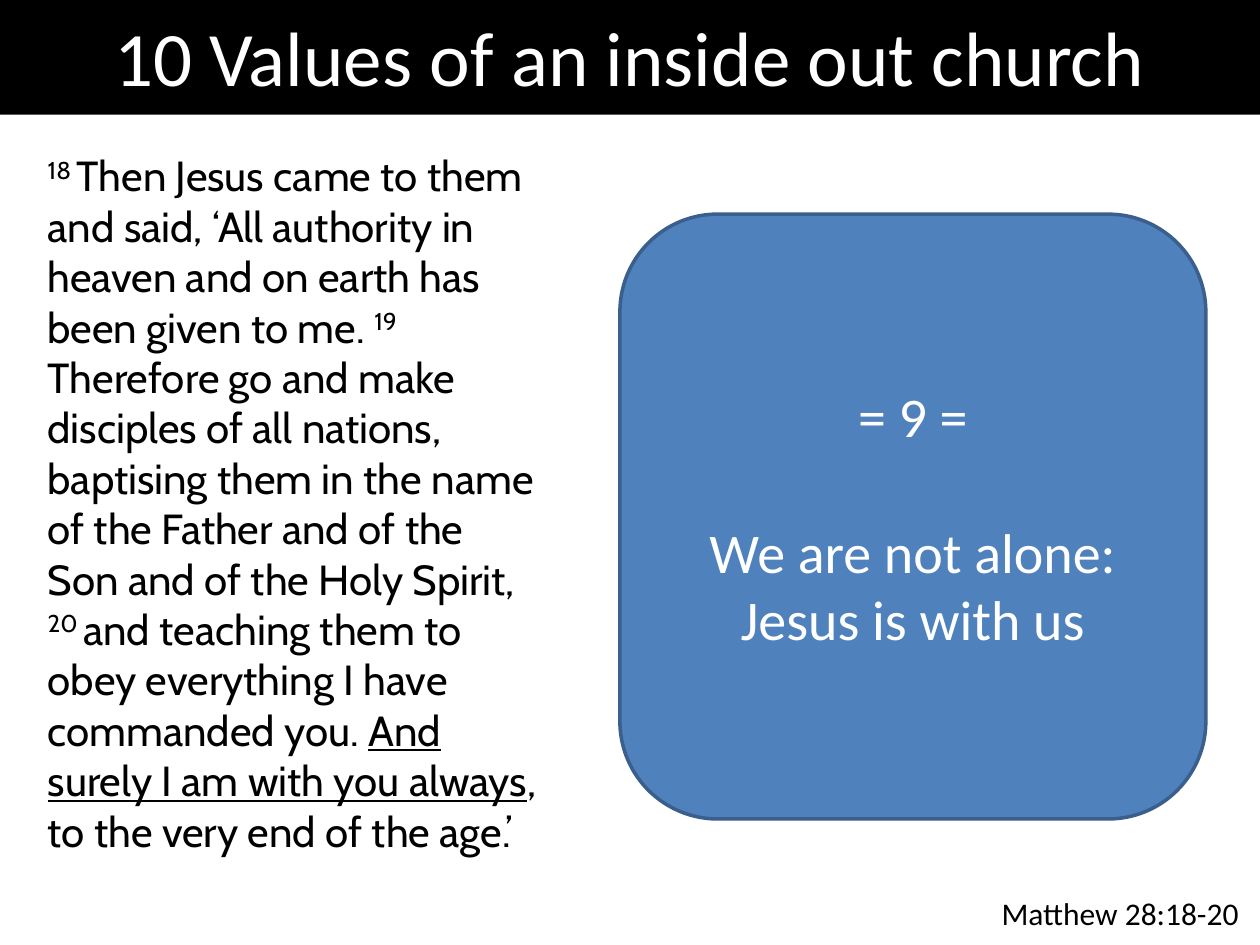
from dataclasses import dataclass

from pptx import Presentation, util as u
from pptx.dml.color import RGBColor
from pptx.enum import shapes, text


@dataclass(frozen=True)
class Theme:
    black: str = "000000"
    white: str = "FFFFFF"
    blue: str = "4F81BD"
    edge: str = "3A5F8C"
    heading_font: str = "Calibri"
    verse_font: str = "Cabin"
    title: int = 44
    point: int = 32
    verse: int = 24
    reference: int = 18


def add_span(para, words, *, font, size, color, raised=False, underline=False):
    """Add one formatted stretch of text to a paragraph."""
    span = para.add_run()
    span.text = words
    span.font.name = font
    span.font.size = u.Pt(size)
    span.font.color.rgb = RGBColor.from_string(color)
    if underline:
        span.font.underline = True
    if raised:
        span.font._element.set("baseline", "30000")


class PageBuilder:
    """Places elements on a grid of 100 columns by 75 rows."""

    COLUMNS, ROWS = 100, 75

    def __init__(self, deck, theme):
        self.deck = deck
        self.theme = theme
        self.page = deck.slides.add_slide(deck.slide_layouts[6])

    def place(self, column, row, columns, rows):
        across = self.deck.slide_width / self.COLUMNS
        down = self.deck.slide_height / self.ROWS
        return [round(n) for n in (column * across, row * down, columns * across, rows * down)]

    def panel(self, kind, area, lines, *, fill, size, edge=None, gap=0):
        """Filled shape with centred white lines of text."""
        box = self.page.shapes.add_shape(kind, *self.place(*area))
        box.shadow.inherit = False
        box.fill.solid()
        box.fill.fore_color.rgb = RGBColor.from_string(fill)
        if edge:
            box.line.color.rgb = RGBColor.from_string(edge)
            box.line.width = u.Pt(2)
        else:
            box.line.fill.background()
        frame = box.text_frame
        frame.word_wrap = True
        frame.vertical_anchor = text.MSO_ANCHOR.MIDDLE
        for index, line in enumerate(lines):
            para = frame.add_paragraph() if index else frame.paragraphs[0]
            para.alignment = text.PP_ALIGN.CENTER
            if index:
                para.space_before = u.Pt(gap)
            add_span(para, line, font=self.theme.heading_font, size=size, color=self.theme.white)

    def passage(self, area, spans, *, font, size, wrap=True):
        """Text box holding one paragraph of (words, format) spans."""
        box = self.page.shapes.add_textbox(*self.place(*area))
        frame = box.text_frame
        frame.word_wrap = wrap
        frame.auto_size = text.MSO_AUTO_SIZE.SHAPE_TO_FIT_TEXT
        for words, style in spans:
            add_span(frame.paragraphs[0], words, font=font, size=size,
                     color=self.theme.black, **style)


def main():
    theme = Theme()
    deck = Presentation()
    deck.slide_width, deck.slide_height = u.Inches(10), u.Inches(7.5)
    builder = PageBuilder(deck, theme)

    # Bible passage with raised verse numbers
    number, plain, stressed = {"raised": True}, {}, {"underline": True}
    verses = [
        ("18 ", number),
        ("Then Jesus came to them and said, ‘All authority in heaven and on earth "
         "has been given to me. ", plain),
        ("19 ", number),
        ("Therefore go and make disciples of all nations, baptising them in the name "
         "of the Father and of the Son and of the Holy Spirit, ", plain),
        ("20 ", number),
        ("and teaching them to obey everything I have commanded you. ", plain),
        ("And surely I am with you always", stressed),
        (", to the very end of the age.’", plain),
    ]
    builder.passage((2.8, 11.4, 40.9, 57.6), verses, font=theme.verse_font, size=theme.verse)

    # Title band
    builder.panel(shapes.MSO_SHAPE.RECTANGLE, (0, -0.3, 100, 9.4),
                  ["10 Values of an inside out church"],
                  fill=theme.black, size=theme.title)

    # Scripture reference
    builder.passage((78.5, 70.5, 21.1, 4), [("Matthew 28:18-20", plain)],
                    font=theme.heading_font, size=theme.reference, wrap=False)

    # Value card
    builder.panel(shapes.MSO_SHAPE.ROUNDED_RECTANGLE, (49.2, 17, 46.5, 48),
                  ["= 9 =", "We are not alone: Jesus is with us"],
                  fill=theme.blue, edge=theme.edge, size=theme.point, gap=39)

    deck.save("out.pptx")


if __name__ == "__main__":
    main()
